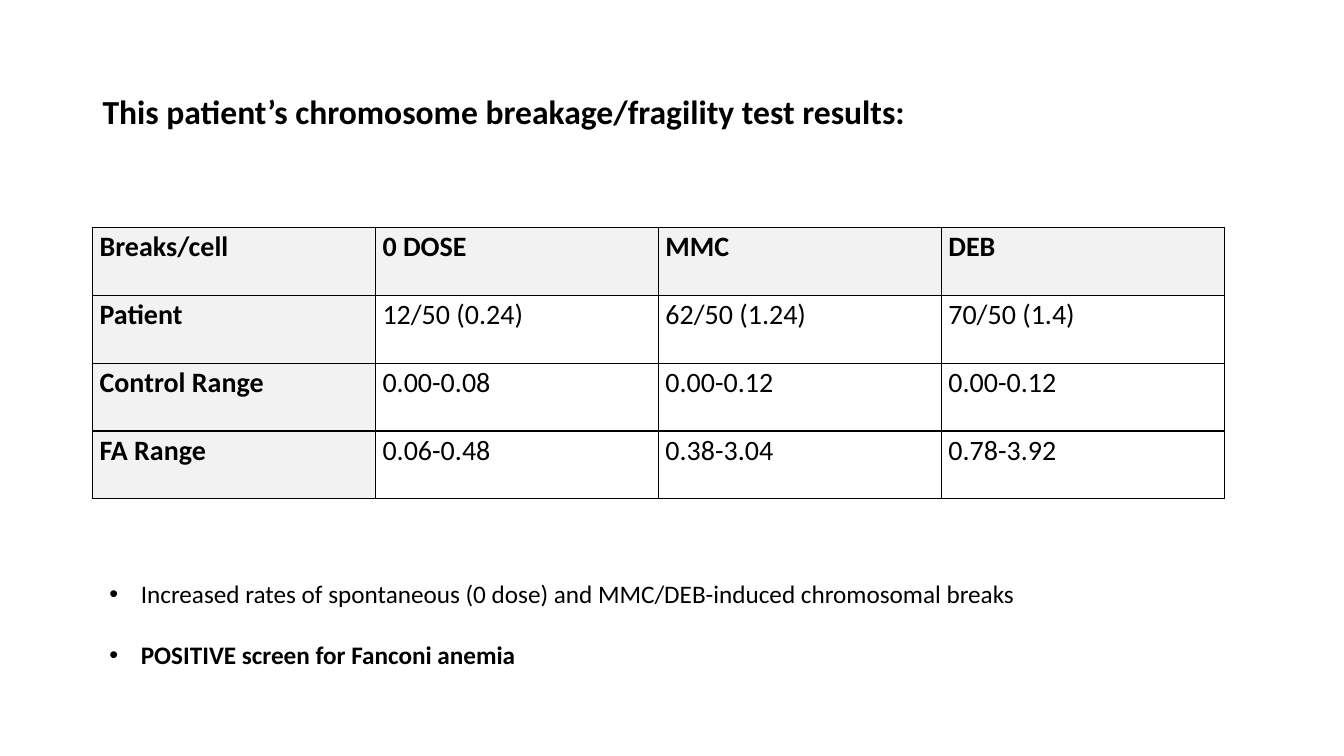
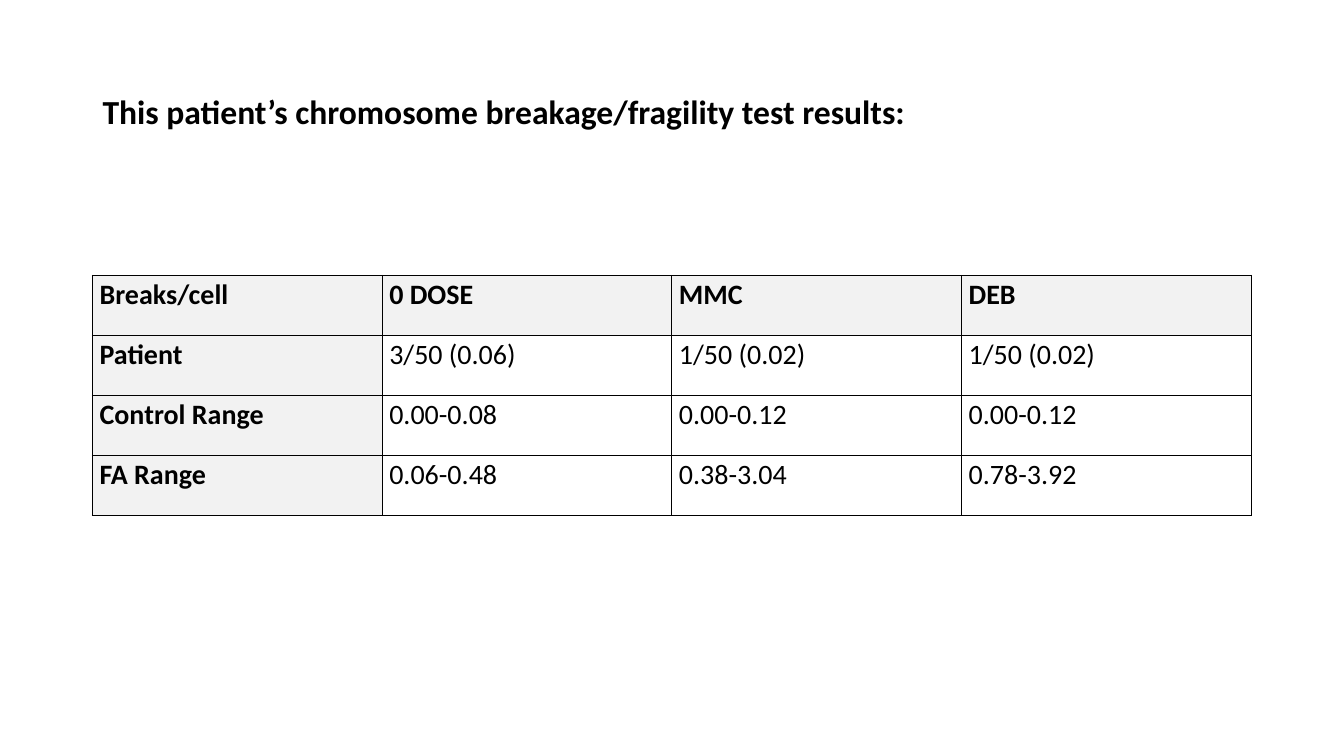
from dataclasses import dataclass

from lxml.etree import SubElement
from pptx import Presentation
from pptx.dml.color import RGBColor
from pptx.enum.text import MSO_ANCHOR, MSO_AUTO_SIZE, PP_ALIGN
from pptx.oxml import parse_xml
from pptx.oxml.ns import nsdecls, qn
from pptx.util import Cm, Pt


@dataclass(frozen=True)
class Theme:
    font: str = "Calibri"
    ink: str = "000000"
    label_fill: str = "F2F2F2"
    title_size: int = 24
    table_size: int = 20
    finding_size: int = 18
    border: int = 1


THEME = Theme()
LEFT = Cm(2.33)
TITLE = "This patient’s chromosome breakage/fragility test results:"
HEADINGS = ("Breaks/cell", "0 DOSE", "MMC", "DEB")
REFERENCE_RANGES = (
    ("Control Range", "0.00-0.08", "0.00-0.12", "0.00-0.12"),
    ("FA Range", "0.06-0.48", "0.38-3.04", "0.78-3.92"),
)
RESULTS = (
    {
        "patient": ("12/50 (0.24)", "62/50 (1.24)", "70/50 (1.4)"),
        "top": Cm(5.73),
        "column_width": Cm(7.13),
        "row_height": Cm(1.71),
        "findings": (
            ("Increased rates of spontaneous (0 dose) and MMC/DEB-induced chromosomal breaks", False),
            ("POSITIVE screen for Fanconi anemia", True),
        ),
    },
    {
        "patient": ("3/50 (0.06)", "1/50 (0.02)", "1/50 (0.02)"),
        "top": Cm(6.94),
        "column_width": Cm(7.3),
        "row_height": Cm(1.51),
        "findings": (),
    },
)


def write(paragraph, text, size, bold=False, line_spacing=1.0, before=0, after=0):
    paragraph.alignment = PP_ALIGN.LEFT
    paragraph.line_spacing = line_spacing
    paragraph.space_before = Pt(before)
    paragraph.space_after = Pt(after)
    run = paragraph.add_run()
    run.text = text
    run.font.name = THEME.font
    run.font.size = Pt(size)
    run.font.bold = bold
    run.font.color.rgb = RGBColor.from_string(THEME.ink)


def add_bullet(paragraph, indent):
    properties = paragraph._p.get_or_add_pPr()
    properties.set("marL", str(indent))
    properties.set("indent", str(-indent))
    SubElement(properties, qn("a:buFont"), typeface="Arial")
    SubElement(properties, qn("a:buChar"), char="•")


def add_borders(cell):
    properties = cell._tc.get_or_add_tcPr()
    for position, side in enumerate(("lnL", "lnR", "lnT", "lnB")):
        properties.insert(position, parse_xml(
            f'<a:{side} {nsdecls("a")} w="{Pt(THEME.border)}"><a:solidFill>'
            f'<a:srgbClr val="{THEME.ink}"/></a:solidFill></a:{side}>'))


def add_title(slide):
    title = slide.shapes.title
    title.left, title.top, title.width, title.height = LEFT, Cm(1.01), Cm(29.21), Cm(3.68)
    title.text_frame.vertical_anchor = MSO_ANCHOR.MIDDLE
    write(title.text_frame.paragraphs[0], TITLE, size=THEME.title_size, bold=True, line_spacing=0.9)


def format_cell(cell, text, is_label):
    cell.margin_left = cell.margin_right = Cm(0.18)
    cell.margin_top = cell.margin_bottom = 0
    write(cell.text_frame.paragraphs[0], text, size=THEME.table_size, bold=is_label,
          line_spacing=1.07, after=8)
    if is_label:
        cell.fill.solid()
        cell.fill.fore_color.rgb = RGBColor.from_string(THEME.label_fill)
    else:
        cell.fill.background()
    add_borders(cell)


def add_breakage_table(slide, result):
    rows = (HEADINGS, ("Patient", *result["patient"]), *REFERENCE_RANGES)
    table = slide.shapes.add_table(
        len(rows), len(HEADINGS), LEFT, result["top"],
        result["column_width"] * len(HEADINGS), result["row_height"] * len(rows)).table
    table.first_row = table.horz_banding = False
    for row_index, row in enumerate(rows):
        for column_index, text in enumerate(row):
            format_cell(table.cell(row_index, column_index), text,
                        is_label=row_index == 0 or column_index == 0)


def add_findings(slide, findings):
    frame = slide.shapes.add_textbox(Cm(2.51), Cm(14.45), Cm(23.62), Cm(2.57)).text_frame
    frame.word_wrap = False
    frame.auto_size = MSO_AUTO_SIZE.SHAPE_TO_FIT_TEXT
    for index, (text, bold) in enumerate(findings):
        paragraph = frame.add_paragraph() if index else frame.paragraphs[0]
        write(paragraph, text, size=THEME.finding_size, bold=bold, before=22 if index else 0)
        add_bullet(paragraph, Cm(0.79))


def main():
    deck = Presentation()
    deck.slide_width, deck.slide_height = Cm(33.87), Cm(19.05)
    title_only = deck.slide_layouts[5]
    for result in RESULTS:
        slide = deck.slides.add_slide(title_only)
        add_title(slide)
        add_breakage_table(slide, result)
        if result["findings"]:
            add_findings(slide, result["findings"])
    deck.save("out.pptx")


if __name__ == "__main__":
    main()
